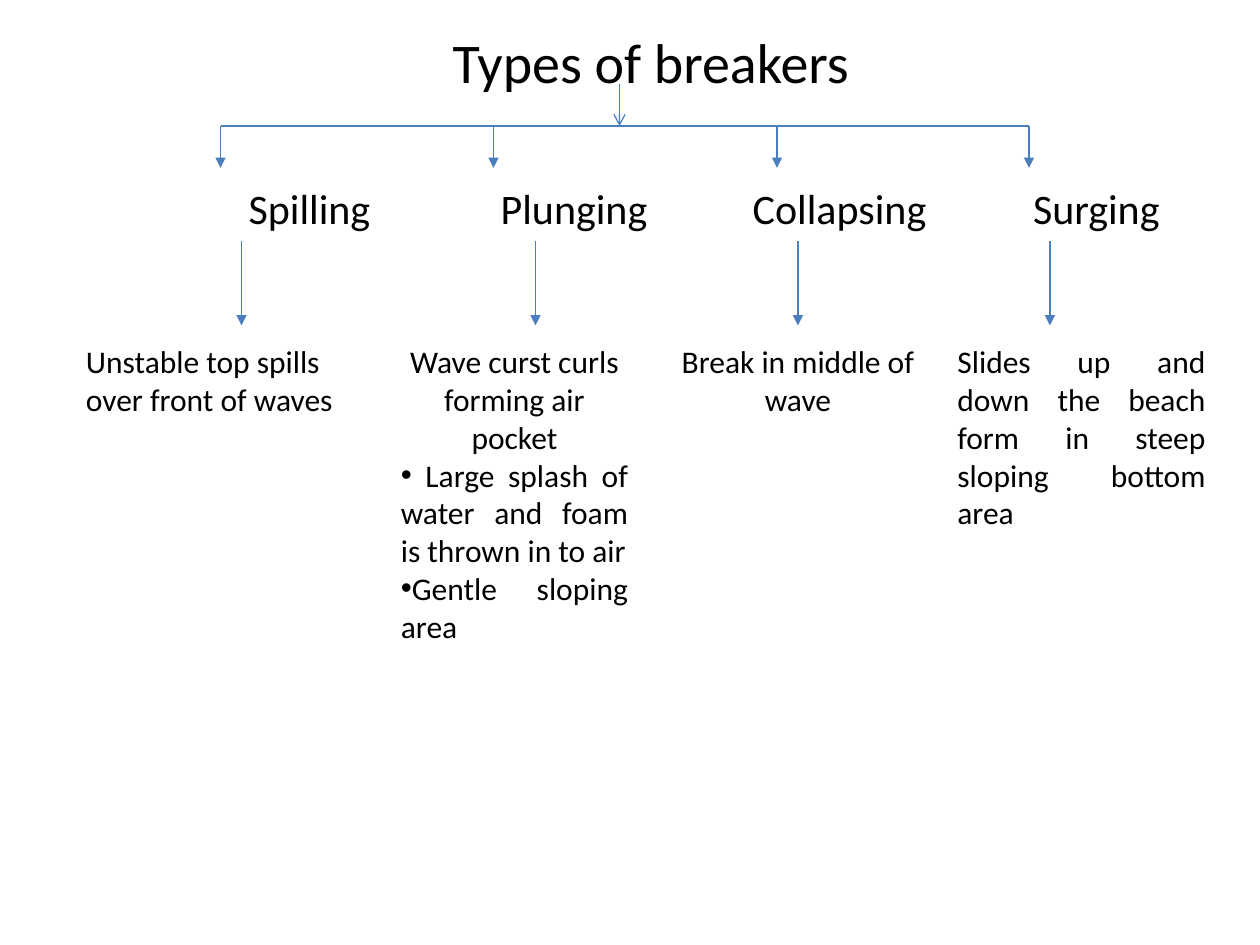
from dataclasses import dataclass
from lxml import etree
from pptx import Presentation
from pptx import util as u
from pptx.dml.color import RGBColor
from pptx.enum import shapes, text
from pptx.oxml import ns

PX = 7620
AL = text.PP_ALIGN


@dataclass(frozen=True)
class Theme:
    """Colours, font and type sizes of the slide."""
    ink: RGBColor = RGBColor(0, 0, 0)
    line: RGBColor = RGBColor(0x4B, 0x7E, 0xBC)
    font: str = "Calibri"
    title: int = 32
    head: int = 24
    body: int = 18
    rule: float = 0.75


@dataclass(frozen=True)
class Kind:
    """One type of breaker, with the places of its parts."""
    name: str
    left: int
    branch: int
    link: int
    x: int
    w: int
    h: int
    items: tuple


THEME = Theme()
KINDS = [
    Kind("Spilling", 225, 210, 230, 70, 260, 85,
         (("Unstable top spills over front of waves", AL.LEFT, False),)),
    Kind("Plunging", 465, 470, 510, 370, 240, 302,
         (("Wave curst curls forming air pocket", AL.CENTER, False),
          (" Large splash of water and foam is thrown in to air",
           AL.JUSTIFY, True),
          ("Gentle sloping area", AL.JUSTIFY, True))),
    Kind("Collapsing", 705, 740, 760, 630, 260, 85,
         (("Break in middle of wave", AL.CENTER, False),)),
    Kind("Surging", 972, 980, 1000, 900, 260, 194,
         (("Slides up and down the beach form in steep sloping bottom area",
           AL.JUSTIFY, False),)),
]


def add(node, tag, **attrs):
    """Append a drawing element."""
    etree.SubElement(node, ns.qn(tag), attrs)


def draw(slide, x, y, w, h, tip=None):
    """Draw a thin line across a box, with an optional arrowhead."""
    line = slide.shapes.add_connector(
        shapes.MSO_CONNECTOR.STRAIGHT,
        *(v * PX for v in (x, y, x + w, y + h)))
    line.line.color.rgb = THEME.line
    line.line.width = u.Pt(THEME.rule)
    if tip:
        add(line.line._get_or_add_ln(), "a:tailEnd", type=tip)
    add(line._element.spPr, "a:effectLst")


def write(slide, x, y, w, h, size, items):
    """Place a wrapping text box with one run in each paragraph."""
    box = slide.shapes.add_textbox(*(v * PX for v in (x, y, w, h)))
    tf = box.text_frame
    tf.word_wrap = True
    for i, (words, align, dot) in enumerate(items):
        para = tf.add_paragraph() if i else tf.paragraphs[0]
        para.alignment = align
        run = para.add_run()
        run.text = words
        run.font.name = THEME.font
        run.font.size = u.Pt(size)
        run.font.color.rgb = THEME.ink
        if dot:
            props = para._p.get_or_add_pPr()
            add(props, "a:buFont", typeface="Arial")
            add(props, "a:buChar", char="•")
    return tf


def tree(slide, x, y, w, h):
    """Draw the stem, the crossbar and one branch for each type."""
    half = h // 2
    draw(slide, x, y + half, w, 0)
    draw(slide, x + 380, y, 0, half, "arrow")
    for kind in KINDS:
        draw(slide, kind.branch, y + half, 0, half, "triangle")


def column(slide, kind, y):
    """Place the name, arrow and description of one type."""
    write(slide, kind.left, y, 200, 60, THEME.head,
          [(kind.name, AL.LEFT, False)])
    draw(slide, kind.link, y + 62, 0, 80, "triangle")
    tf = write(slide, kind.x, y + 152, kind.w, kind.h, THEME.body, kind.items)
    tf.auto_size = text.MSO_AUTO_SIZE.SHAPE_TO_FIT_TEXT


def main():
    """Build and save the slide."""
    deck = Presentation()
    deck.slide_width, deck.slide_height = 1200 * PX, 900 * PX
    slide = deck.slides.add_slide(deck.slide_layouts[6])
    write(slide, 60, 20, 1120, 77, THEME.title,
          [("Types of breakers", AL.CENTER, False)])
    tree(slide, 210, 80, 770, 80)
    for kind in KINDS:
        column(slide, kind, 168)
    deck.save("out.pptx")


if __name__ == "__main__":
    main()
